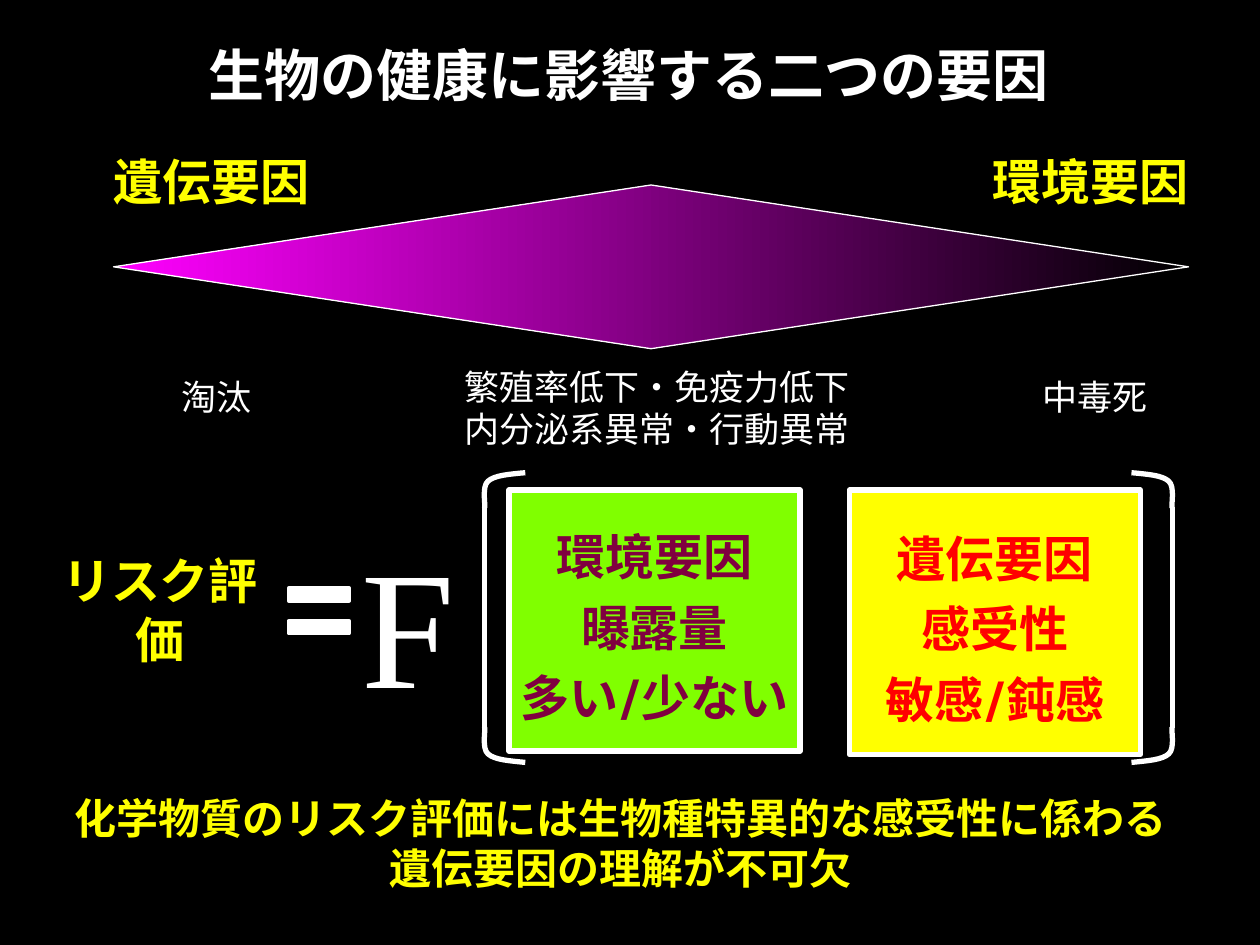
"""Build the slide on the two factors that affect the health of living things."""
import pptx
import pptx.dml.color
import pptx.enum.shapes
import pptx.enum.text
import pptx.oxml.ns
import pptx.util
from lxml import etree
from pptx.util import Cm

SHAPE = pptx.enum.shapes.MSO_SHAPE
ALIGN = pptx.enum.text.PP_ALIGN
ANCHOR = pptx.enum.text.MSO_ANCHOR
WHITE, YELLOW = "FFFFFF", "FFFF00"
SANS, SERIF, KARLA = "Noto Sans CJK JP", "Times New Roman", "Karla"

headings = [
    (["生物の健康に影響する二つの要因"], (0.76, 0.69, 23.85, 1.6),
     dict(size=32, font=SERIF, bold=True, wrap=True)),
    (["遺伝要因"], (2.29, 3.05, 4.88, 1.19),
     dict(size=28, color=YELLOW, bold=True, align=ALIGN.LEFT, inset=0, wrap=True)),
    (["環境要因"], (19.28, 3.05, 4.67, 1.19),
     dict(size=28, color=YELLOW, bold=True, align=ALIGN.RIGHT, inset=0, wrap=True)),
]
effects = [
    (["繁殖率低下・免疫力低下", "内分泌系異常・行動異常"], (9.07, 7.24, 8.36, 1.96), {}),
    (["中毒死"], (20.75, 7.44, 2.64, 1.12), {}),
    (["淘汰"], (3.4, 7.44, 1.93, 1.12), {}),
]
formula = [
    (["リスク評価"], (0.66, 11.15, 5.13, 2.26),
     dict(size=28, font=KARLA, color=YELLOW, bold=True, anchor=ANCHOR.MIDDLE)),
    (["F"], (7.04, 10.36, 2.39, 4.32), dict(size=96, font=SERIF, align=ALIGN.LEFT)),
]
conclusion = [
    (["化学物質のリスク評価には生物種特異的な感受性に係わる", "遺伝要因の理解が不可欠"],
     (0.86, 15.85, 23.29, 2.31),
     dict(size=24, font=KARLA, color=YELLOW, bold=True, wrap=True)),
]
factors = [
    (["環境要因", "曝露量", "多い/少ない"], (10.26, 9.88, 5.87, 5.26), "80FF00", "800040"),
    (["遺伝要因", "感受性", "敏感/鈍感"], (17.12, 9.88, 5.87, 5.33), YELLOW, "FF0000"),
]
spectrum = (2.29, 3.73, 21.67, 3.3)
equals_bars = [(5.82, top, 1.22, 0.25) for top in (11.86, 12.52)]
brackets = [(10.59, -1), (22.81, 1)]
bracket_top, bracket_bottom, corner_height = 9.53, 15.37, 0.69
corner_curves = [
    [(0, 0), (0.31, 0.03), (0.62, 0.05), (0.75, 0.17)],
    [(0.75, 0.17), (0.88, 0.28), (0.8, 0.63), (0.82, 0.71)],
]
corner_width = corner_curves[-1][-1][0]
STEPS = 8


def rgb(value):
    return pptx.dml.color.RGBColor.from_string(value)


def write(shape, lines, size=20, font=SANS, color=WHITE, bold=False, align=ALIGN.CENTER,
          anchor=ANCHOR.TOP, inset=None, wrap=False, spacing=None):
    frame = shape.text_frame
    frame.word_wrap = wrap
    frame.vertical_anchor = anchor
    if inset is not None:
        frame.margin_left = frame.margin_right = Cm(inset)
        frame.margin_top = frame.margin_bottom = Cm(inset)
    for index, line in enumerate(lines):
        paragraph = frame.add_paragraph() if index else frame.paragraphs[0]
        paragraph.alignment = align
        paragraph.line_spacing = spacing
        run = paragraph.add_run()
        run.text = line
        run.font.size = pptx.util.Pt(size)
        run.font.name = font
        run.font.bold = bold
        run.font.color.rgb = rgb(color)


def outline(shape, width):
    shape.line.color.rgb = rgb(WHITE)
    shape.line.width = pptx.util.Pt(width)


def add_block(shapes, kind, box, width, fill=None):
    block = shapes.add_shape(kind, *map(Cm, box))
    block.shadow.inherit = False
    outline(block, width)
    if fill:
        block.fill.solid()
        block.fill.fore_color.rgb = rgb(fill)
    return block


def add_texts(shapes, entries):
    for lines, box, style in entries:
        write(shapes.add_textbox(*map(Cm, box)), lines, **style)


def curve_points(curve):
    for step in range(1, STEPS + 1):
        t = step / STEPS
        weights = ((1 - t) ** 3, 3 * t * (1 - t) ** 2, 3 * t * t * (1 - t), t ** 3)
        yield tuple(sum(w * point[axis] for w, point in zip(weights, curve)) for axis in (0, 1))


def add_bracket(shapes, tip, side):
    for edge, down in ((bracket_top, 1), (bracket_bottom, -1)):
        builder = shapes.build_freeform(Cm(tip), Cm(edge))
        builder.add_line_segments(
            [(Cm(tip + side * x), Cm(edge + down * y))
             for curve in corner_curves for x, y in curve_points(curve)], close=False)
        corner = builder.convert_to_shape()
        corner.shadow.inherit = False
        corner.fill.background()
        outline(corner, 3)
    stem_x = Cm(tip + side * corner_width)
    stem = shapes.add_connector(
        pptx.enum.shapes.MSO_CONNECTOR.STRAIGHT, stem_x, Cm(bracket_top + corner_height),
        stem_x, Cm(bracket_bottom - corner_height))
    outline(stem, 3)
    etree.SubElement(stem._element.spPr, pptx.oxml.ns.qn("a:effectLst"))


def main():
    deck = pptx.Presentation()
    deck.slide_width, deck.slide_height = Cm(25.4), Cm(19.05)
    slide = deck.slides.add_slide(deck.slide_layouts[6])
    slide.background.fill.solid()
    slide.background.fill.fore_color.rgb = rgb("000000")
    shapes = slide.shapes

    add_texts(shapes, headings)
    diamond = add_block(shapes, SHAPE.DIAMOND, spectrum, 0.75)
    diamond.fill.gradient()
    diamond.fill.gradient_angle = 0
    for stop, color in zip(diamond.fill.gradient_stops, ("FF00FF", "000000")):
        stop.color.rgb = rgb(color)
    add_texts(shapes, effects + conclusion + formula)
    for bar in equals_bars:
        add_block(shapes, SHAPE.RECTANGLE, bar, 2.25, WHITE)
    for tip, side in brackets:
        add_bracket(shapes, tip, side)
    for lines, box, fill, color in factors:
        write(add_block(shapes, SHAPE.RECTANGLE, box, 3, fill), lines, size=28, font=KARLA,
              color=color, bold=True, anchor=ANCHOR.MIDDLE, spacing=1.2)
    deck.save("out.pptx")


if __name__ == "__main__":
    main()
